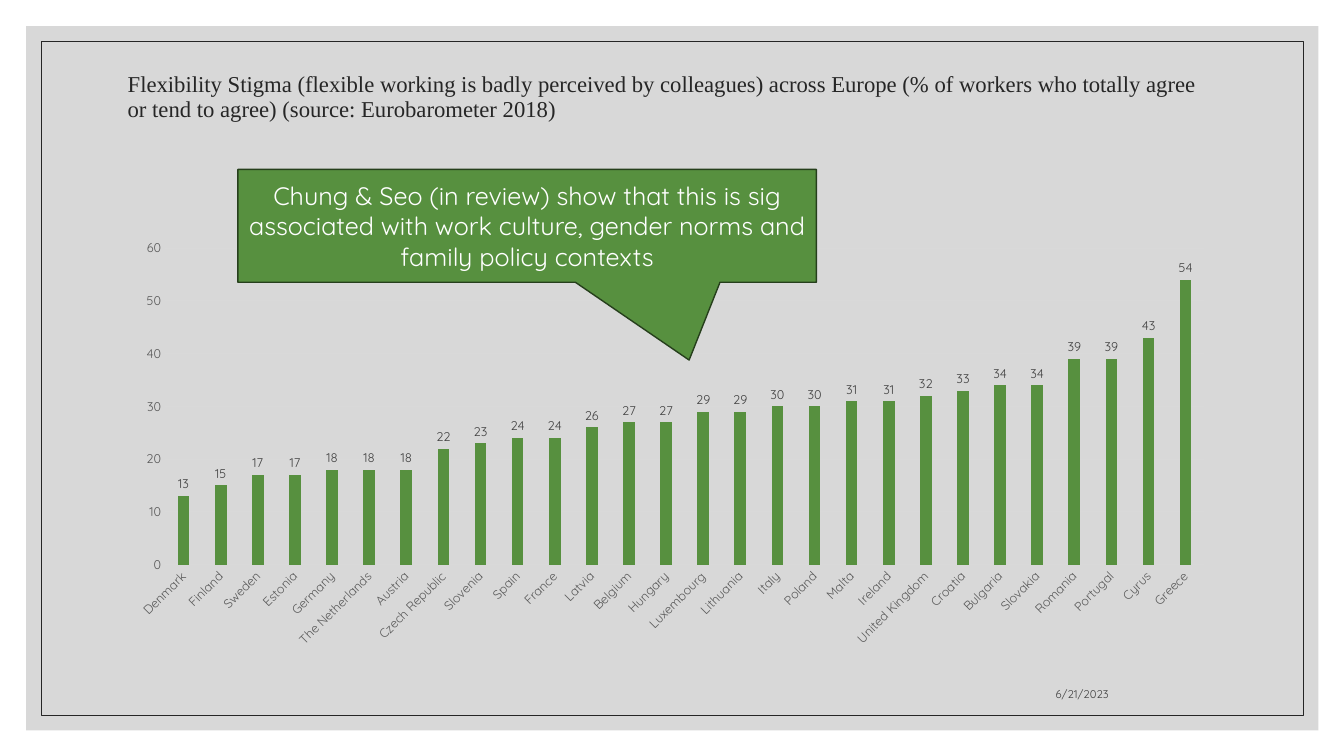
import pptx
import pptx.chart.data
import pptx.dml.color
import pptx.enum.chart
import pptx.enum.shapes
import pptx.enum.text
import pptx.oxml
import pptx.oxml.ns
import pptx.util

Pt = pptx.util.Pt
ALIGN = pptx.enum.text.PP_ALIGN
ANCHOR = pptx.enum.text.MSO_ANCHOR
SHAPE = pptx.enum.shapes.MSO_SHAPE
SANS = "Quicksand"
GREEN = "57903F"
STIGMA = {
    "Denmark": 13, "Finland": 15, "Sweden": 17, "Estonia": 17, "Germany": 18,
    "The Netherlands": 18, "Austria": 18, "Czech Republic": 22, "Slovenia": 23,
    "Spain": 24, "France": 24, "Latvia": 26, "Belgium": 27, "Hungary": 27,
    "Luxembourg": 29, "Lithuania": 29, "Italy": 30, "Poland": 30, "Malta": 31,
    "Ireland": 31, "United Kingdom": 32, "Croatia": 33, "Bulgaria": 34,
    "Slovakia": 34, "Romania": 39, "Portugal": 39, "Cyrus": 43, "Greece": 54,
}


def rgb(color):
    return pptx.dml.color.RGBColor.from_string(color)


def format_font(font, size, color, name=SANS):
    font.size = Pt(size)
    font.name = name
    font.color.rgb = rgb(color)


def format_line(line, color, width):
    line.color.rgb = rgb(color)
    line.width = Pt(width)


def write(tf, text, size, color, name=SANS, align=ALIGN.LEFT, anchor=ANCHOR.MIDDLE, spacing=1.0):
    tf.word_wrap = True
    tf.auto_size = pptx.enum.text.MSO_AUTO_SIZE.NONE
    tf.vertical_anchor = anchor
    p = tf.paragraphs[0]
    p.alignment = align
    p.line_spacing = spacing
    r = p.add_run()
    r.text = text
    format_font(r.font, size, color, name)


def add_shape(s, kind, box, fill=None, line=None, width=1):
    sp = s.shapes.add_shape(kind, *map(Pt, box))
    sp.shadow.inherit = False
    if fill:
        sp.fill.solid()
        sp.fill.fore_color.rgb = rgb(fill)
    else:
        sp.fill.background()
    if line:
        format_line(sp.line, line, width)
    else:
        sp.line.fill.background()
    return sp


def add_frame(s, box):
    x, y, w, h = box
    panel = add_shape(s, SHAPE.RECTANGLE, box, fill="BFBFBF")
    color = panel.fill._xPr.find(".//" + pptx.oxml.ns.qn("a:srgbClr"))
    color.append(pptx.oxml.parse_xml(f'<a:alpha {pptx.oxml.ns.nsdecls("a")} val="60000"/>'))
    gap = 10.8
    add_shape(s, SHAPE.RECTANGLE, (x + gap, y + gap, w - 2 * gap, h - 2 * gap), line="262626", width=0.5)


def add_title(s, box):
    sp = s.shapes.title
    sp.left, sp.top, sp.width, sp.height = map(Pt, box)
    sp.text_frame.margin_top = Pt(2)
    write(sp.text_frame,
          "Flexibility Stigma (flexible working is badly perceived by colleagues) across Europe "
          "(% of workers who totally agree or tend to agree) (source: Eurobarometer 2018)",
          16.2, "262626", name="Times New Roman", anchor=ANCHOR.TOP, spacing=0.9)
    s.shapes._spTree.append(sp._element)


def add_date(s, box):
    sp = s.shapes.add_textbox(*map(Pt, box))
    write(sp.text_frame, "6/21/2023", 8, "404040", align=ALIGN.RIGHT, anchor=ANCHOR.BOTTOM)


def add_stigma_chart(s, box):
    data = pptx.chart.data.CategoryChartData(number_format="#,##0")
    data.categories = list(STIGMA)
    data.add_series("Series 1", list(STIGMA.values()))
    kind = pptx.enum.chart.XL_CHART_TYPE.COLUMN_CLUSTERED
    chart = s.shapes.add_chart(kind, *map(Pt, box), data).chart
    chart.has_legend = False
    chart.has_title = False
    format_font(chart.font, 10, "000000")

    plot = chart.plots[0]
    plot.vary_by_categories = False
    plot.gap_width = 219
    plot.overlap = -27
    series = plot.series[0]
    series.format.fill.solid()
    series.format.fill.fore_color.rgb = rgb(GREEN)
    labels = series.data_labels
    labels.show_value = True
    labels.number_format = "#,##0"
    labels.number_format_is_linked = False
    labels.position = pptx.enum.chart.XL_LABEL_POSITION.OUTSIDE_END
    format_font(labels.font, 9, "404040")

    for axis in (chart.category_axis, chart.value_axis):
        axis.major_tick_mark = axis.minor_tick_mark = pptx.enum.chart.XL_TICK_MARK.NONE
        format_font(axis.tick_labels.font, 9, "595959")
    format_line(chart.category_axis.format.line, "D9D9D9", 0.75)
    body = chart.category_axis._element.find(".//" + pptx.oxml.ns.qn("a:bodyPr"))
    body.set("rot", "-2700000")
    body.set("vert", "horz")
    values = chart.value_axis
    values.format.line.fill.background()
    values.minimum_scale, values.maximum_scale, values.major_unit = 0, 60, 10
    format_line(values.major_gridlines.format.line, "D9D9D9", 0.75)


def add_callout(s, box):
    sp = add_shape(s, SHAPE.RECTANGULAR_CALLOUT, box, fill=GREEN, line="263F1C")
    sp.adjustments[0] = 0.28
    sp.adjustments[1] = 1.19
    write(sp.text_frame,
          "Chung & Seo (in review) show that this is sig associated with work culture, "
          "gender norms and family policy contexts",
          18, "FFFFFF", align=ALIGN.CENTER)


def main():
    prs = pptx.Presentation()
    prs.slide_width, prs.slide_height = Pt(960), Pt(540)
    s = prs.slides.add_slide(prs.slide_layouts[5])
    add_frame(s, (18.7, 18.7, 923, 503))
    add_title(s, (84, 50.4, 792, 80.6))
    add_date(s, (571.7, 475.2, 227.5, 28.8))
    add_stigma_chart(s, (84, 165.6, 792, 303))
    add_callout(s, (169.9, 121, 413.3, 80.6))
    prs.save("out.pptx")


if __name__ == "__main__":
    main()
